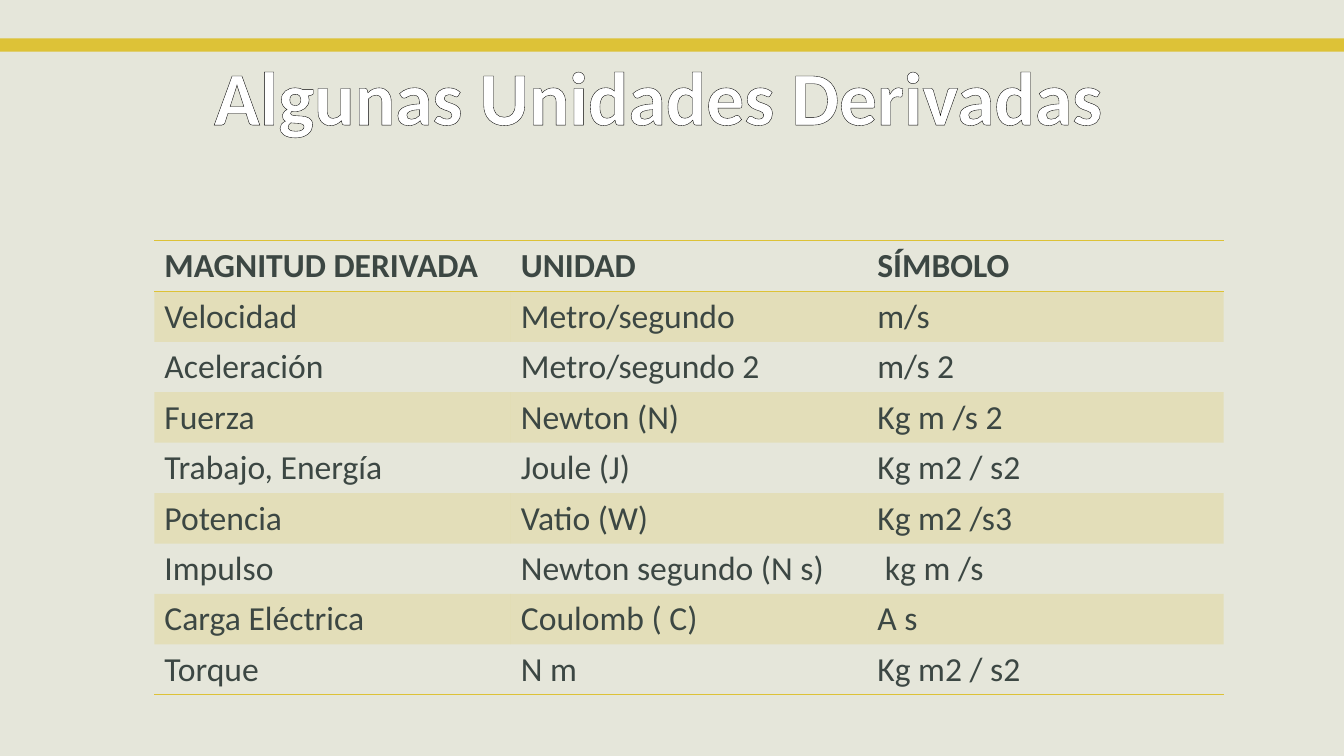
from lxml.etree import SubElement as Sub
from pptx import Presentation
from pptx.dml.color import RGBColor
from pptx.enum.shapes import MSO_SHAPE as Shape
from pptx.enum.text import MSO_ANCHOR as Anchor, MSO_AUTO_SIZE as Fit, PP_ALIGN as Align
from pptx.oxml import parse_xml
from pptx.oxml.ns import nsdecls, qn
from pptx.util import Cm, Pt

PAPER = RGBColor(0xE5, 0xE6, 0xDA)
GOLD = RGBColor(0xDD, 0xC2, 0x37)
INK = RGBColor(0x3C, 0x47, 0x43)
WHITE = RGBColor(0xFF, 0xFF, 0xFF)
BLACK = RGBColor(0, 0, 0)
PLAIN = "{2D5ABB26-0587-4C30-8999-92F81FD0307C}"

UNITS = [
    ("MAGNITUD DERIVADA", "UNIDAD", "SÍMBOLO"),
    ("Velocidad", "Metro/segundo", "m/s"),
    ("Aceleración", "Metro/segundo 2", "m/s 2"),
    ("Fuerza", "Newton (N)", "Kg m /s 2"),
    ("Trabajo, Energía", "Joule (J)", "Kg m2 / s2"),
    ("Potencia", "Vatio (W)", "Kg m2 /s3"),
    ("Impulso", "Newton segundo (N s)", " kg m /s"),
    ("Carga Eléctrica", "Coulomb ( C)", "A s"),
    ("Torque", "N m", "Kg m2 / s2"),
]


def line(tag, color):
    return parse_xml(
        f'<a:{tag} {nsdecls("a")} w="{Pt(1)}"><a:solidFill>'
        f'<a:srgbClr val="{color}"/></a:solidFill></a:{tag}>')


def write(frame, text, size=24, color=INK, bold=False, align=Align.LEFT, edge=None):
    para = frame.paragraphs[0]
    para.alignment = align
    run = para.add_run()
    run.text = text
    font = run.font
    font.name, font.size, font.bold = "Calibri", Pt(size), bold
    font.color.rgb = color
    if edge is not None:
        run._r.get_or_add_rPr().insert(0, line("ln", edge))


def add_bar(slide, width):
    bar = slide.shapes.add_shape(Shape.RECTANGLE, 0, Cm(0.97), width, Cm(0.33))
    bar.shadow.inherit = False
    bar.fill.solid()
    bar.fill.fore_color.rgb = GOLD
    bar.line.fill.background()


def add_title(slide, text):
    title = slide.shapes.title
    title.left, title.top = Cm(5.03), Cm(1.12)
    title.width, title.height = Cm(23.14), Cm(2.57)
    frame = title.text_frame
    frame.word_wrap = False
    frame.auto_size = Fit.SHAPE_TO_FIT_TEXT
    frame.vertical_anchor = Anchor.TOP
    write(frame, text, size=54, color=WHITE, bold=True, align=Align.CENTER, edge=BLACK)


def paint(cell, band, sides):
    if band:
        cell.fill.solid()
        cell.fill.fore_color.rgb = GOLD
    else:
        cell.fill.background()
    props = cell._tc.get_or_add_tcPr()
    for tint in props.iter(qn("a:srgbClr")):
        Sub(tint, qn("a:alpha"), val="20000")
    for spot, side in enumerate(sides):
        props.insert(spot, line(side, GOLD))


def add_units(slide, rows):
    count, wide = len(rows), len(rows[0])
    high = Cm(1.27)
    frame = slide.shapes.add_table(
        count, wide, Cm(3.89), Cm(6.07), Cm(26.95), high * count)
    table = frame.table
    table.first_row = table.horz_banding = False
    for style in frame._element.iter(qn("a:tableStyleId")):
        style.text = PLAIN
    edges = {0: ("lnT", "lnB"), count - 1: ("lnB",)}
    for i, row in enumerate(rows):
        table.rows[i].height = high
        for j, text in enumerate(row):
            cell = table.cell(i, j)
            write(cell.text_frame, text, bold=i == 0)
            paint(cell, i % 2 == 1, edges.get(i, ()))


def main():
    deck = Presentation()
    deck.slide_width, deck.slide_height = Cm(33.87), Cm(19.05)
    slide = deck.slides.add_slide(deck.slide_layouts[5])
    back = slide.background.fill
    back.solid()
    back.fore_color.rgb = PAPER
    add_bar(slide, deck.slide_width)
    add_title(slide, "Algunas Unidades Derivadas")
    add_units(slide, UNITS)
    deck.save("out.pptx")


if __name__ == "__main__":
    main()
